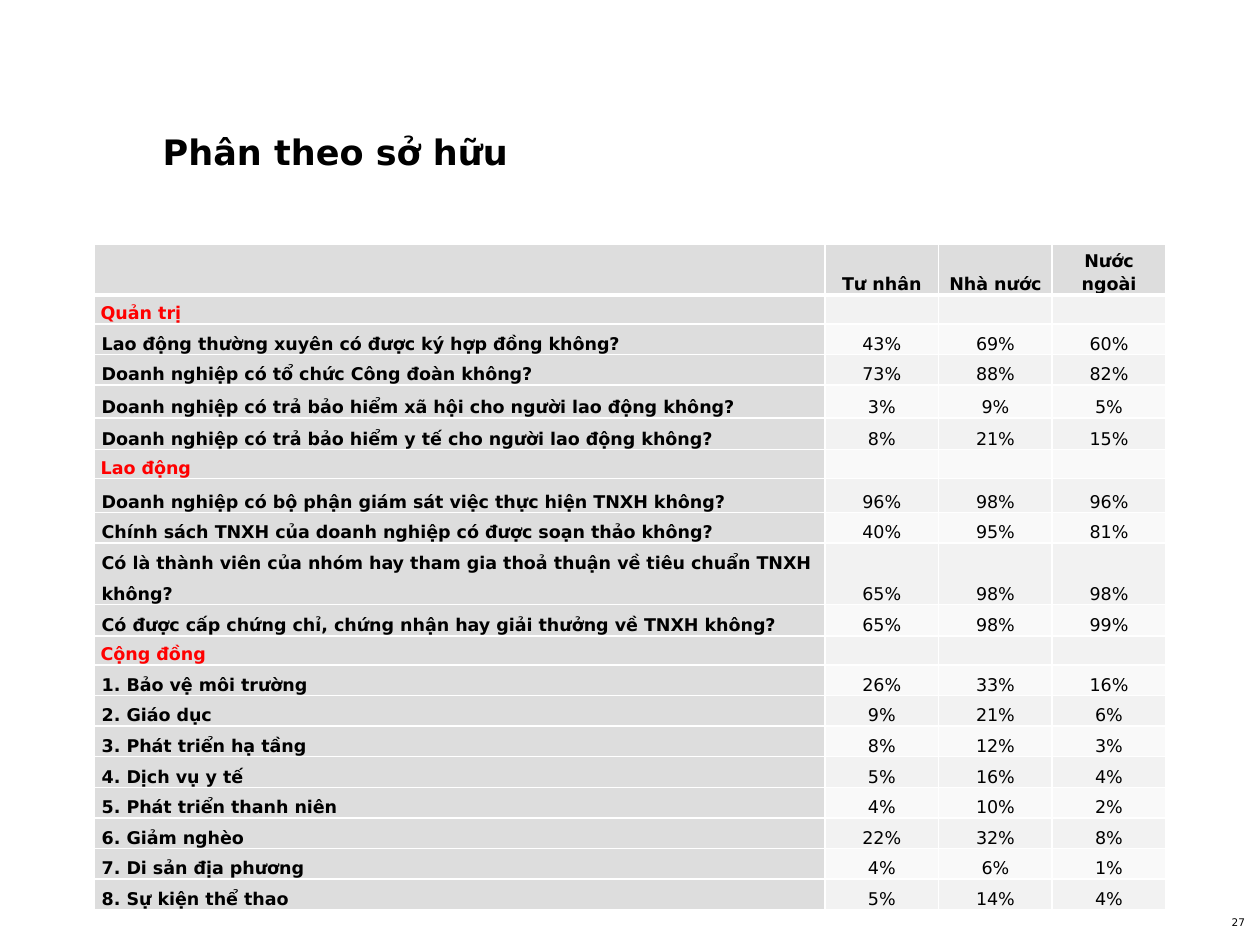
"""Build the slide that breaks the survey results down by ownership."""
from lxml import etree
from pptx import Presentation, util as u
from pptx.dml.color import RGBColor
from pptx.enum import text
from pptx.oxml import ns

FONT = "DejaVu Sans"
BLACK = RGBColor(0x00, 0x00, 0x00)
RED = RGBColor(0xFF, 0x00, 0x00)
WHITE = RGBColor(0xFF, 0xFF, 0xFF)
HEADER = RGBColor(0xDD, 0xDD, 0xDD)
BANDS = [RGBColor(0xF9, 0xF9, 0xF9), RGBColor(0xF2, 0xF2, 0xF2)]

ROWS = [
    (1.02, "", "Tư nhân", "Nhà nước", "Nước ngoài"),
    (0.58, "Quản trị", "", "", ""),
    (0.51, "Lao động thường xuyên có được ký hợp đồng không?", "43%", "69%", "60%"),
    (0.51, "Doanh nghiệp có tổ chức Công đoàn không?", "73%", "88%", "82%"),
    (0.66, "Doanh nghiệp có trả bảo hiểm xã hội cho người lao động không?", "3%", "9%", "5%"),
    (0.64, "Doanh nghiệp có trả bảo hiểm y tế cho người lao động không?", "8%", "21%", "15%"),
    (0.58, "Lao động", "", "", ""),
    (0.69, "Doanh nghiệp có bộ phận giám sát việc thực hiện TNXH không?", "96%", "98%", "96%"),
    (0.51, "Chính sách TNXH của doanh nghiệp có được soạn thảo không?", "40%", "95%", "81%"),
    (1.02, "Có là thành viên của nhóm hay tham gia thoả thuận về tiêu chuẩn TNXH không?",
     "65%", "98%", "98%"),
    (0.64, "Có được cấp chứng chỉ, chứng nhận hay giải thưởng về TNXH không?", "65%", "98%", "99%"),
    (0.58, "Cộng đồng", "", "", ""),
    (0.51, "1. Bảo vệ môi trường", "26%", "33%", "16%"),
    (0.51, "2. Giáo dục", "9%", "21%", "6%"),
    (0.51, "3. Phát triển hạ tầng", "8%", "12%", "3%"),
    (0.51, "4. Dịch vụ y tế", "5%", "16%", "4%"),
    (0.51, "5. Phát triển thanh niên", "4%", "10%", "2%"),
    (0.51, "6. Giảm nghèo", "22%", "32%", "8%"),
    (0.51, "7. Di sản địa phương", "4%", "6%", "1%"),
    (0.51, "8. Sự kiện thể thao", "5%", "14%", "4%"),
]


def add_span(para, words, size, color=BLACK, bold=False):
    span = para.add_run()
    span.text = words
    span.font.name = FONT
    span.font.size = u.Pt(size)
    span.font.bold = bold
    span.font.color.rgb = color


def add_border(cell, side, points):
    line = etree.SubElement(cell._tc.get_or_add_tcPr(), ns.qn("a:ln" + side), w=str(u.Pt(points)))
    fill = etree.SubElement(line, ns.qn("a:solidFill"))
    etree.SubElement(fill, ns.qn("a:srgbClr"), val=str(WHITE))


deck = Presentation()
deck.slide_width, deck.slide_height = u.Cm(25.4), u.Cm(19.05)
page = deck.slides.add_slide(deck.slide_layouts[5])

title = page.shapes.title
title.left, title.top, title.width, title.height = u.Cm(3.28), u.Cm(1.7), u.Cm(15.98), u.Cm(1.78)
number = page.shapes.add_textbox(u.Cm(23.93), u.Cm(18.47), u.Cm(1.17), u.Cm(0.43))
for box, words, size, bold, align, anchor in [
    (title, "Phân theo sở hữu", 20, True, text.PP_ALIGN.LEFT, text.MSO_ANCHOR.BOTTOM),
    (number, "27", 6, False, text.PP_ALIGN.RIGHT, text.MSO_ANCHOR.TOP),
]:
    frame = box.text_frame
    frame.margin_left = frame.margin_right = frame.margin_top = frame.margin_bottom = 0
    frame.word_wrap = True
    frame.auto_size = text.MSO_AUTO_SIZE.NONE
    frame.vertical_anchor = anchor
    para = frame.paragraphs[0]
    para.alignment = align
    add_span(para, words, size, bold=bold)

holder = page.shapes.add_table(len(ROWS), 4, u.Cm(1.9), u.Cm(4.93), u.Cm(21.6), u.Cm(13.64))
table = holder.table
for column, width in zip(table.columns, [14.73, 2.29, 2.29, 2.29]):
    column.width = u.Cm(width)

for row, (height, *entries) in enumerate(ROWS):
    table.rows[row].height = u.Cm(height)
    section = row > 0 and not entries[1]
    for col, words in enumerate(entries):
        cell = table.cell(row, col)
        question = row > 0 and col == 0 and not section
        for side in "LRTB":
            heavy = (row, side) in [(0, "B"), (1, "T")]
            add_border(cell, side, 3 if heavy else 1)
        cell.fill.solid()
        cell.fill.fore_color.rgb = HEADER if row == 0 or col == 0 else BANDS[row % 2]
        cell.margin_left = cell.margin_right = u.Cm(0.15 if question else 0.13)
        cell.margin_top = cell.margin_bottom = 0
        numbered = question and words[0].isdigit()
        cell.vertical_anchor = text.MSO_ANCHOR.MIDDLE if numbered else text.MSO_ANCHOR.BOTTOM
        para = cell.text_frame.paragraphs[0]
        para.alignment = text.PP_ALIGN.CENTER if col else text.PP_ALIGN.LEFT
        para.line_spacing = 1.5 if question else 1.15
        if question:
            para.space_after = u.Pt(10)
        if words:
            add_span(para, words, 10, RED if section else BLACK, row == 0 or col == 0)
        else:
            etree.SubElement(para._p, ns.qn("a:endParaRPr"), sz="1000")
holder.height = u.Cm(13.64)

deck.save("out.pptx")
